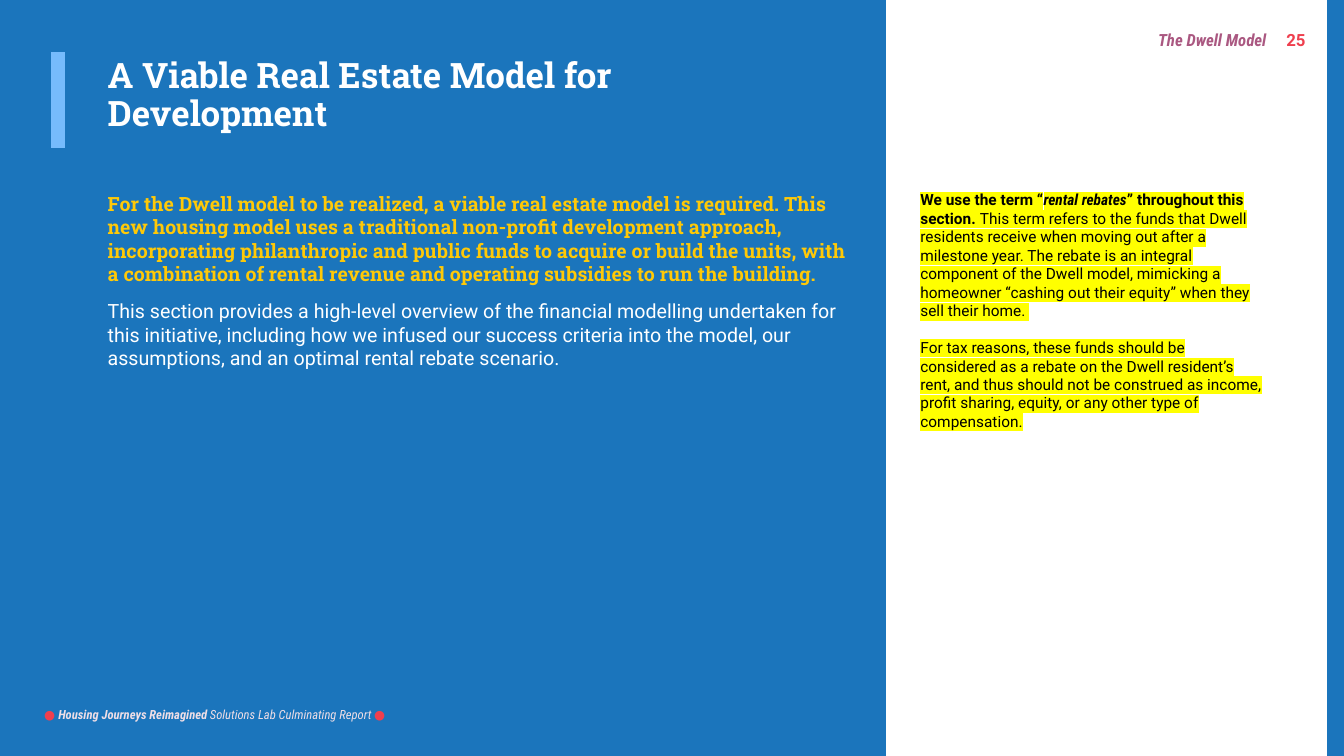
from lxml import etree
from pptx import Presentation
from pptx import util as u
from pptx.dml.color import RGBColor
from pptx.enum import shapes, text
from pptx.oxml import ns

BLUE, WHITE, BLACK, RED = "1B75BC", "FFFFFF", "000000", "EF3F4E"
SKY, GOLD, PLUM, BLUSH, YELLOW = "76BBFC", "FFC907", "AA5881", "EEDEE6", "FFFF00"
SANS, NARROW, SLAB = "Roboto", "Roboto Condensed", "Roboto Slab"


def color(hex_code):
    return RGBColor.from_string(hex_code)


class Page:
    """Draws styled elements on one slide."""

    def __init__(self, deck, background):
        self.slide = deck.slides.add_slide(deck.slide_layouts[6])
        fill = self.slide.background.fill
        fill.solid()
        fill.fore_color.rgb = color(background)

    def panel(self, left, top, width, height, fill):
        panel = self.slide.shapes.add_shape(
            shapes.MSO_SHAPE.RECTANGLE, *map(u.Inches, (left, top, width, height)))
        panel.shadow.inherit = False
        panel.fill.solid()
        panel.fill.fore_color.rgb = color(fill)
        panel.line.fill.background()

    def rule(self, x1, y1, x2, y2, stroke, width):
        rule = self.slide.shapes.add_connector(
            shapes.MSO_CONNECTOR.STRAIGHT, *map(u.Inches, (x1, y1, x2, y2)))
        rule.line.color.rgb = color(stroke)
        rule.line.width = u.Pt(width)
        etree.SubElement(rule._element.spPr, ns.qn("a:effectLst"))

    def words(self, box, size, paragraphs, middle=False, align=None,
              spacing=None, gap=0, highlight=None):
        frame = self.slide.shapes.add_textbox(*map(u.Inches, box)).text_frame
        frame.word_wrap = True
        if middle:
            frame.vertical_anchor = text.MSO_ANCHOR.MIDDLE
        for index, runs in enumerate(paragraphs):
            paragraph = frame.add_paragraph() if index else frame.paragraphs[0]
            paragraph.alignment = align
            paragraph.line_spacing = spacing
            if index:
                paragraph.space_before = u.Pt(gap)
            for wording, font, ink, style in runs:
                run = paragraph.add_run()
                run.text = wording
                run.font.size = u.Pt(size)
                run.font.name = font
                run.font.bold = "b" in style
                run.font.italic = "i" in style
                run.font.color.rgb = color(ink)
                if highlight:
                    self.mark(run, highlight)

    def mark(self, run, shade):
        properties = run._r.get_or_add_rPr()
        marker = etree.Element(ns.qn("a:highlight"))
        etree.SubElement(marker, ns.qn("a:srgbClr"), val=shade)
        properties.find(ns.qn("a:solidFill")).addnext(marker)


def main():
    deck = Presentation()
    deck.slide_width, deck.slide_height = u.Inches(13.33), u.Inches(7.5)
    page = Page(deck, BLUE)

    page.panel(8.79, 0, 4.37, 7.5, WHITE)
    page.words((12.66, 0.25, 0.47, 0.3), 12, [[("25", SANS, RED, "b")]], middle=True)
    page.words((10.71, 0.25, 1.95, 0.3), 12, [[("The Dwell Model", NARROW, PLUM, "bi")]],
               middle=True, align=text.PP_ALIGN.RIGHT)

    page.rule(0.58, 0.52, 0.58, 1.47, SKY, 10)
    page.words((0.97, 0.53, 5.71, 0.96), 25, [[
        ("A Viable Real Estate Model for Development", SLAB, WHITE, "b")]], spacing=0.9)
    page.words((0.97, 1.85, 7.64, 1.04), 14, [[
        ("For the Dwell model to be realized, a viable real estate model is required. "
         "This new housing model uses a traditional non-profit development approach, "
         "incorporating philanthropic and public funds to acquire or build the units, "
         "with a combination of rental revenue and operating subsidies to run the "
         "building.", SLAB, GOLD, "b")]])
    page.words((0.97, 2.92, 7.64, 0.81), 14, [[
        ("This section provides a high-level overview of the financial modelling "
         "undertaken for this initiative, including how we infused our success criteria "
         "into the model, our assumptions, and an optimal rental rebate scenario.",
         SANS, WHITE, "")]])

    page.words((9.03, 1.84, 3.61, 2.51), 11, [
        [("We use the term “", SANS, BLACK, "b"),
         ("rental rebates", NARROW, BLACK, "bi"),
         ("” throughout this section. ", SANS, BLACK, "b"),
         ("This term refers to the funds that Dwell residents receive when moving out "
          "after a milestone year. The rebate is an integral component of the Dwell "
          "model, mimicking a homeowner “cashing out their equity” when they sell their "
          "home. ", SANS, BLACK, "")],
        [("For tax reasons, these funds should be considered as a rebate on the Dwell "
          "resident’s rent, and thus should not be construed as income, profit sharing, "
          "equity, or any other type of compensation.", SANS, BLACK, "")],
    ], gap=13, highlight=YELLOW)

    page.words((0.34, 6.96, 3.61, 0.25), 9, [[
        ("● ", SLAB, RED, ""),
        ("Housing Journeys Reimagined ", NARROW, BLUSH, "bi"),
        ("Solutions Lab Culminating Report ", NARROW, BLUSH, "i"),
        ("●", SLAB, RED, "")]], middle=True)

    deck.save("out.pptx")


if __name__ == "__main__":
    main()
